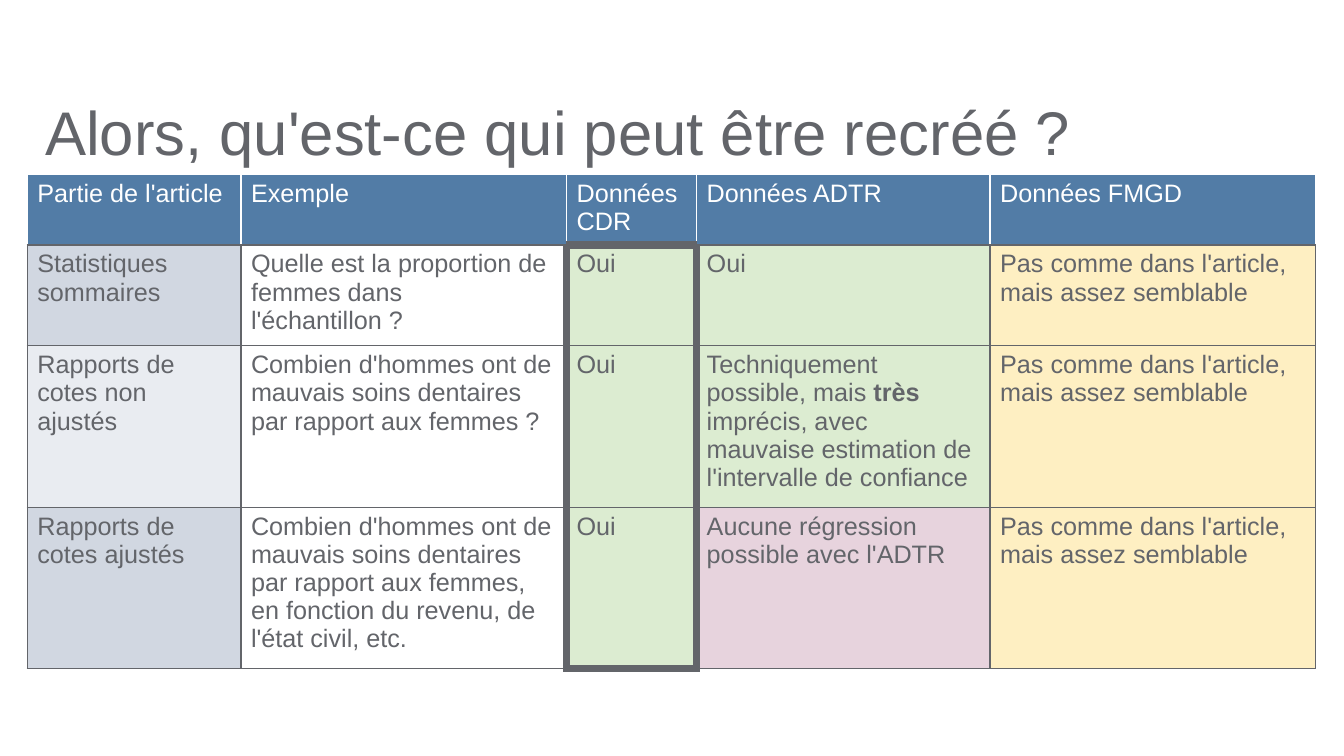
from lxml import etree
from pptx import Presentation
from pptx import util as u
from pptx.dml.color import RGBColor
from pptx.enum import text
from pptx.oxml.ns import qn

WIDE, HIGH = u.Inches(13.33), u.Inches(7.5)
FONT = "Arial"
INK = {"grey": "63656A", "white": "FFFFFF", "blue": "527CA6", "dusk": "D1D7E1",
       "mist": "E9ECF1", "green": "DCECD1", "sand": "FEEFC2", "pink": "E7D3DD"}

# Shares of the slide's width and height, in percent
COLS = [15.9, 24.23, 9.68, 21.83, 24.23]
ROWS = [9.07, 9.07, 16.8, 20.67]
FRAME = 2  # column with the thick outline

CLOSE = "Pas comme dans l'article, mais assez semblable"
CELLS = [
    ["Partie de l'article", "Exemple", "Données CDR", "Données ADTR", "Données FMGD"],
    ["Statistiques sommaires",
     "Quelle est la proportion de femmes dans l'échantillon ?",
     "Oui", "Oui", CLOSE],
    ["Rapports de cotes non ajustés",
     "Combien d'hommes ont de mauvais soins dentaires par rapport aux femmes ?",
     "Oui",
     "Techniquement possible, mais *très* imprécis, avec mauvaise estimation "
     "de l'intervalle de confiance", CLOSE],
    ["Rapports de cotes ajustés",
     "Combien d'hommes ont de mauvais soins dentaires par rapport aux femmes, "
     "en fonction du revenu, de l'état civil, etc.",
     "Oui", "Aucune régression possible avec l'ADTR", CLOSE],
]
FILLS = [
    ["blue"] * 5,
    ["dusk", "white", "green", "green", "sand"],
    ["mist", "white", "green", "green", "sand"],
    ["dusk", "white", "green", "pink", "sand"],
]


def across(share):
    return round(WIDE * share / 100)


def down(share):
    return round(HIGH * share / 100)


def write(para, words, size, ink):
    """Add runs to a paragraph; words between asterisks are bold."""
    for i, part in enumerate(words.split("*")):
        run = para.add_run()
        run.text = part
        run.font.name, run.font.size = FONT, u.Pt(size)
        run.font.bold = i % 2 == 1
        run.font.color.rgb = RGBColor.from_string(INK[ink])


def title(slide, words):
    box = slide.shapes.add_textbox(across(2.63), down(12.93), across(96.02), down(10.13))
    frame = box.text_frame
    frame.word_wrap = True
    frame.vertical_anchor = text.MSO_ANCHOR.MIDDLE
    frame.paragraphs[0].line_spacing = 0.9
    write(frame.paragraphs[0], words, 44, "grey")


def edges(row, col):
    """Give the ink and width of each side of a cell, in schema order."""
    body = row > 0
    thick = {
        "L": body and col in (FRAME, FRAME + 1),
        "R": body and col in (FRAME - 1, FRAME),
        "T": col == FRAME and row == 1,
        "B": col == FRAME and row in (0, len(ROWS) - 1),
    }
    for side, bold in thick.items():
        yield side, "grey" if body or side == "B" else "white", 6 if bold else 1


def border(cell, row, col):
    props = cell._tc.get_or_add_tcPr()
    for spot, (side, ink, width) in enumerate(edges(row, col)):
        line = etree.Element(qn("a:ln" + side), w=str(u.Pt(width)))
        fill = etree.SubElement(line, qn("a:solidFill"))
        etree.SubElement(fill, qn("a:srgbClr"), val=INK[ink])
        props.insert(spot, line)


def grid(slide):
    table = slide.shapes.add_table(
        len(ROWS), len(COLS), across(2.03), down(23.07),
        across(sum(COLS)), down(sum(ROWS))).table
    for col, share in zip(table.columns, COLS):
        col.width = across(share)
    for row, share in zip(table.rows, ROWS):
        row.height = down(share)
    for r, line in enumerate(CELLS):
        for c, words in enumerate(line):
            cell = table.cell(r, c)
            cell.fill.solid()
            cell.fill.fore_color.rgb = RGBColor.from_string(INK[FILLS[r][c]])
            border(cell, r, c)
            write(cell.text_frame.paragraphs[0], words, 18, "grey" if r else "white")


def main():
    deck = Presentation()
    deck.slide_width, deck.slide_height = WIDE, HIGH
    slide = deck.slides.add_slide(deck.slide_layouts[6])
    title(slide, "Alors, qu'est-ce qui peut être recréé ?")
    grid(slide)
    deck.save("out.pptx")


if __name__ == "__main__":
    main()
